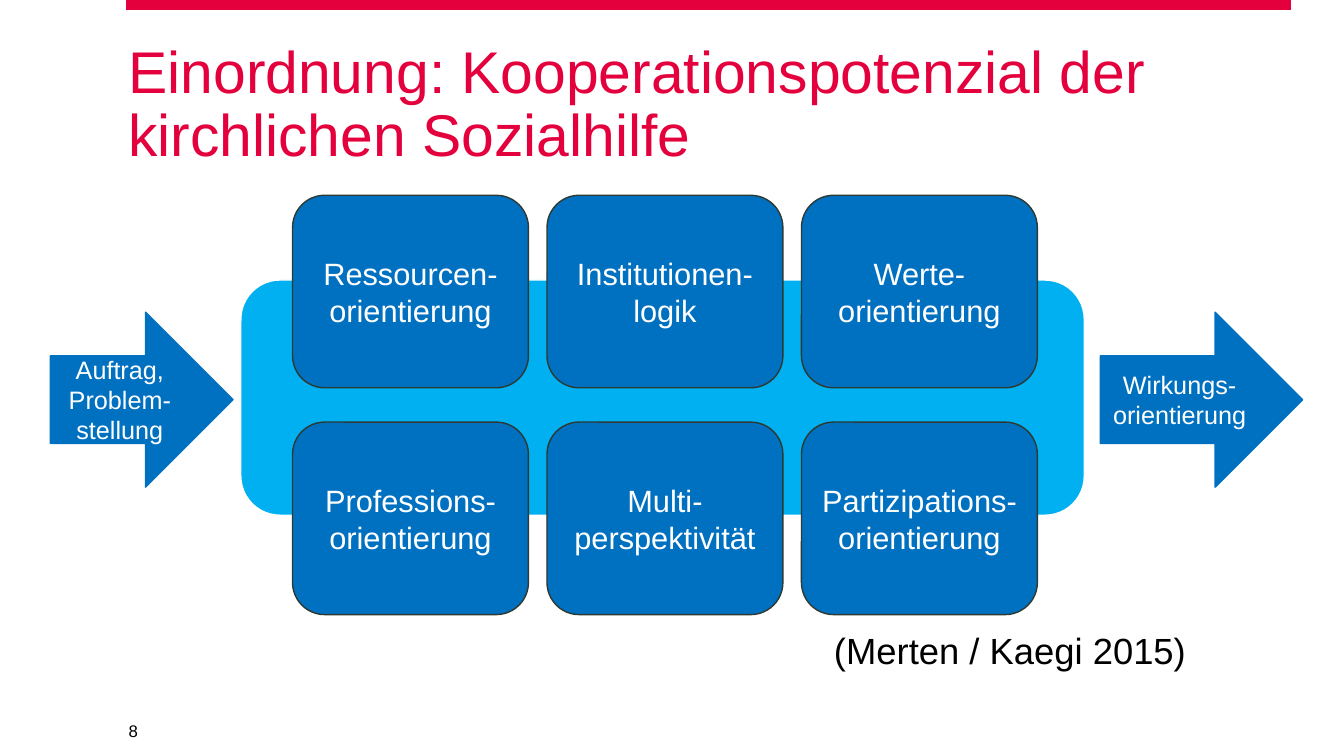
"""Build the slide on the cooperation potential of church social aid."""
from lxml import etree
from pptx import Presentation
from pptx.dml.color import RGBColor
from pptx.enum.shapes import MSO_CONNECTOR, MSO_SHAPE
from pptx.enum.text import MSO_ANCHOR, MSO_AUTO_SIZE, PP_ALIGN
from pptx.oxml.ns import qn
from pptx.util import Pt

TITLE = "Einordnung: Kooperationspotenzial der kirchlichen Sozialhilfe"
SOURCE = "(Merten / Kaegi 2015)"
PAGE = "8"
FIELDS = [
    ["Ressourcen-orientierung", "Institutionen-logik", "Werte-orientierung"],
    ["Professions-orientierung", "Multi-perspektivität", "Partizipations-orientierung"],
]
ARROWS = [
    ("Auftrag, Problem-stellung", 36, 130.5),
    ("Wirkungs-orientierung", 786, 144.5),
]

RED = RGBColor(0xE4, 0x00, 0x3C)
BLUE = RGBColor(0x00, 0x70, 0xC0)
SKY = RGBColor(0x00, 0xB0, 0xF0)
DARK = RGBColor(0x2D, 0x39, 0x32)
WHITE = RGBColor(0xFF, 0xFF, 0xFF)
BLACK = RGBColor(0x00, 0x00, 0x00)

LEFT, CENTER, RIGHT = PP_ALIGN.LEFT, PP_ALIGN.CENTER, PP_ALIGN.RIGHT
TOP, MIDDLE = MSO_ANCHOR.TOP, MSO_ANCHOR.MIDDLE
ROUND, ARROW = MSO_SHAPE.ROUNDED_RECTANGLE, MSO_SHAPE.RIGHT_ARROW

GRID_LEFT, GRID_TOP = 209, 139.5
BOX_W, BOX_H = 168.5, 137.5
STEP_X, STEP_Y = 181.75, 162


def write(sp, text, size, color=WHITE, align=CENTER, anchor=MIDDLE,
          insets=(7.2, 3.6, 7.2, 3.6), spacing=1.0):
    """Put one formatted paragraph into a shape."""
    tf = sp.text_frame
    tf.word_wrap = True
    tf.auto_size = MSO_AUTO_SIZE.NONE
    tf.vertical_anchor = anchor
    tf.margin_left, tf.margin_top, tf.margin_right, tf.margin_bottom = map(Pt, insets)
    p = tf.paragraphs[0]
    p.alignment = align
    p.line_spacing = spacing
    p.space_before = Pt(0)
    r = p.add_run()
    r.text = text
    r.font.name = "Arial"
    r.font.size = Pt(size)
    r.font.color.rgb = color
    return p


def place(sp, x, y, w, h):
    """Move and size a shape."""
    sp.left, sp.top, sp.width, sp.height = map(Pt, (x, y, w, h))


def add_block(slide, kind, x, y, w, h, fill, line):
    """Add a filled preset shape without a shadow."""
    sp = slide.shapes.add_shape(kind, Pt(x), Pt(y), Pt(w), Pt(h))
    sp.shadow.inherit = False
    sp.fill.solid()
    sp.fill.fore_color.rgb = fill
    sp.line.color.rgb = line
    sp.line.width = Pt(1)
    return sp


def main():
    """Compose and save the slide."""
    prs = Presentation()
    prs.slide_width, prs.slide_height = Pt(960), Pt(540)
    slide = prs.slides.add_slide(prs.slide_layouts[1])

    bar = slide.shapes.add_connector(
        MSO_CONNECTOR.STRAIGHT, Pt(90), Pt(3.5), Pt(922.5), Pt(3.5))
    bar.line.color.rgb = RED
    bar.line.width = Pt(7.5)
    etree.SubElement(bar._element.spPr, qn("a:effectLst"))

    title = slide.shapes.title
    place(title, 84.5, 23, 828, 59)
    write(title, TITLE, 42, RED, LEFT, TOP, (7.2, 7.2, 7.2, 3.6), 0.9)

    body = slide.placeholders[1]
    place(body, 588.5, 445, 324, 40)
    p = write(body, SOURCE, 26, BLACK, LEFT, TOP)
    pPr = p._p.get_or_add_pPr()
    pPr.set("marL", "0")
    pPr.set("indent", "0")
    etree.SubElement(pPr, qn("a:buNone"))

    number = slide.shapes.add_textbox(Pt(72), Pt(507.5), Pt(29.5), Pt(29))
    write(number, PAGE, 12, BLACK, RIGHT, insets=(3, 3, 3, 3))

    add_block(slide, ROUND, 172, 200, 602.5, 168, SKY, WHITE)
    for text, x, w in ARROWS:
        write(add_block(slide, ARROW, x, 223, w, 125, BLUE, BLUE), text, 18)
    for row, names in enumerate(FIELDS):
        for col, name in enumerate(names):
            box = add_block(slide, ROUND, GRID_LEFT + col * STEP_X,
                            GRID_TOP + row * STEP_Y, BOX_W, BOX_H, BLUE, DARK)
            write(box, name, 22)

    prs.save("out.pptx")


if __name__ == "__main__":
    main()
